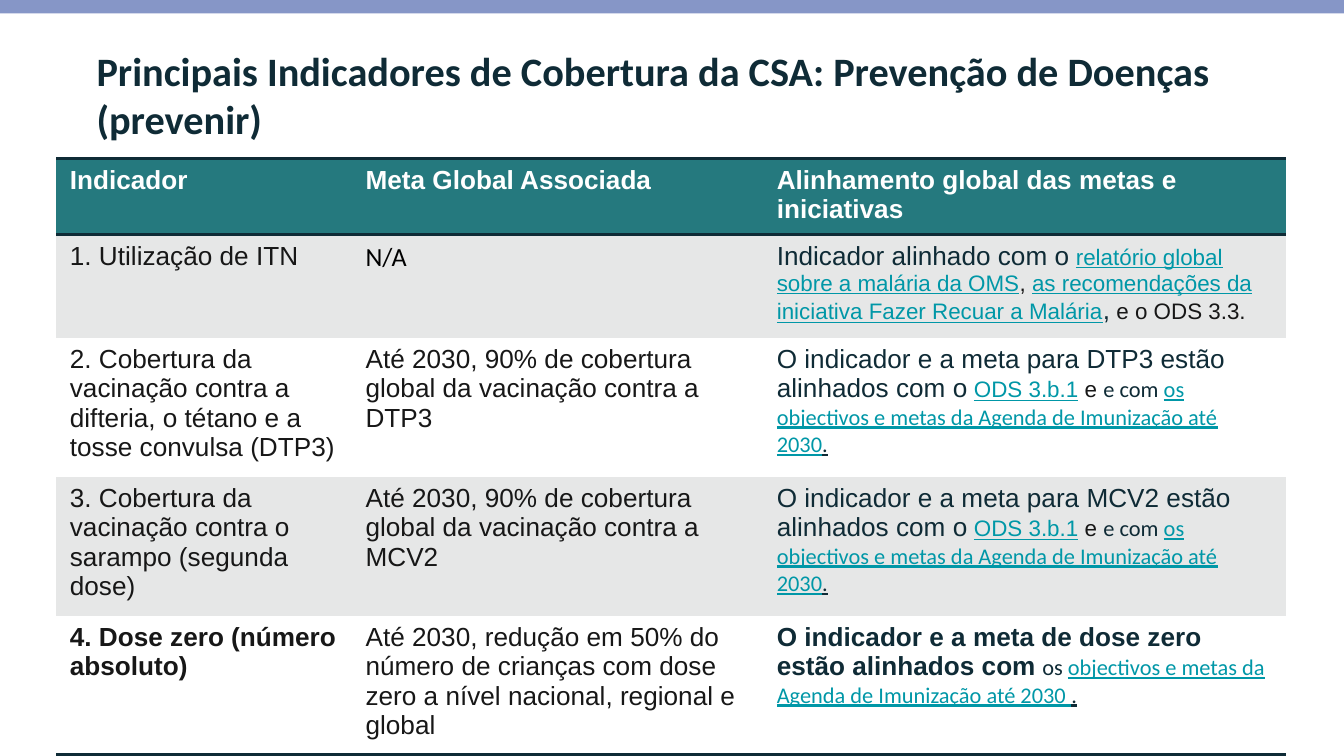
from lxml import etree
from pptx import Presentation
from pptx import util as u
from pptx.dml.color import RGBColor
from pptx.enum import shapes, text
from pptx.oxml import ns

NAVY = RGBColor(0x0F, 0x2B, 0x36)
TEAL = RGBColor(0x25, 0x79, 0x7E)
LINK = RGBColor(0x00, 0x97, 0xA7)
BAND = RGBColor(0x86, 0x96, 0xC7)
GREY = RGBColor(0xE6, 0xE7, 0xE7)
INK = RGBColor(0x17, 0x17, 0x17)
BLACK = RGBColor(0, 0, 0)
WHITE = RGBColor(0xFF, 0xFF, 0xFF)

WIDE = u.Inches(10)
HIGH = WIDE * 9 // 16
UNIT = WIDE // 100
PLAIN = "{2D5ABB26-0587-4C30-8999-92F81FD0307C}"

STYLES = {
    "title": ("Calibri", 21.6, NAVY, True, False),
    "head": ("Arial", 14, WHITE, True, False),
    "body": ("Arial", 14, INK, False, False),
    "strong": ("Arial", 14, INK, True, False),
    "none": ("Calibri", 14, BLACK, False, False),
    "lead": ("Arial", 14, NAVY, False, False),
    "key": ("Arial", 14, NAVY, True, False),
    "small": ("Arial", 12, INK, False, False),
    "link": ("Arial", 12, LINK, False, True),
    "note": ("Calibri", 12, NAVY, False, False),
    "goal": ("Calibri", 12, LINK, False, True),
    "stop": ("Calibri", 12, NAVY, False, True),
}

AGENDA = "objectivos e metas da Agenda de Imunização até 2030"


def vaccine(name):
    """Return the alignment runs for one vaccine."""
    return [
        ("lead", f"O indicador e a meta para {name} estão alinhados com o"),
        ("small", " "), ("link", "ODS 3.b.1"), ("small", " e "),
        ("note", "e com "), ("goal", "os " + AGENDA), ("stop", "."),
    ]


def target(name):
    """Return the coverage target runs for one vaccine."""
    return [("body", f"Até 2030, 90% de cobertura global da vacinação contra a {name}")]


ROWS = [
    [[("head", "Indicador")],
     [("head", "Meta Global Associada")],
     [("head", "Alinhamento global das metas e iniciativas")]],
    [[("body", "1. Utilização de ITN")],
     [("none", "N/A")],
     [("lead", "Indicador alinhado com o"), ("small", " "),
      ("link", "relatório global sobre a malária da OMS"), ("small", ", "),
      ("link", "as recomendações da iniciativa Fazer Recuar a Malária"),
      ("lead", ","), ("small", " e o ODS 3.3.")]],
    [[("body", "2. Cobertura da vacinação contra a difteria, o tétano e a tosse convulsa (DTP3)")],
     target("DTP3"), vaccine("DTP3")],
    [[("body", "3. Cobertura da vacinação contra o sarampo (segunda dose)")],
     target("MCV2"), vaccine("MCV2")],
    [[("strong", "4. Dose zero (número absoluto)")],
     [("body", "Até 2030, redução em 50% do número de crianças com dose zero "
               "a nível nacional, regional e global")],
     [("key", "O indicador e a meta de dose zero estão alinhados com"),
      ("small", " "), ("note", "os "), ("goal", AGENDA + " "), ("stop", ".")]],
]


def area(*cells):
    """Turn left, top, width and height in grid units into a box."""
    return [int(cell * UNIT) for cell in cells]


def write(para, runs):
    """Add styled runs to a paragraph."""
    for style, words in runs:
        run = para.add_run()
        run.text = words
        font = run.font
        font.name, size, font.color.rgb, font.bold, font.underline = STYLES[style]
        font.size = u.Pt(size)


def rule(cell, side):
    """Draw a navy line on one side of a cell."""
    line = etree.Element(ns.qn("a:ln" + side), w=str(u.Pt(2)))
    fill = etree.SubElement(line, ns.qn("a:solidFill"))
    etree.SubElement(fill, ns.qn("a:srgbClr"), val=str(NAVY))
    props = cell._tc.get_or_add_tcPr()
    props.insert(len(props.findall(ns.qn("a:lnT"))), line)


def strip(slide, box):
    """Place the coloured band in its box."""
    bar = slide.shapes.add_shape(shapes.MSO_SHAPE.RECTANGLE, *box)
    bar.shadow.inherit = False
    bar.fill.solid()
    bar.fill.fore_color.rgb = BAND
    bar.line.fill.background()


def title(slide, box, words):
    """Place the heading in its box."""
    frame = slide.shapes.add_textbox(*box).text_frame
    frame.word_wrap = True
    frame.vertical_anchor = text.MSO_ANCHOR.TOP
    frame.margin_left = frame.margin_right = u.Inches(0.1)
    frame.margin_top = frame.margin_bottom = u.Inches(0.1)
    write(frame.paragraphs[0], [("title", words)])


def grid(slide, box, parts, step):
    """Place the indicator table, with columns split by parts and rows of one step."""
    frame = slide.shapes.add_table(len(ROWS), len(parts), *box)
    table = frame.table
    table._tbl.tblPr.find(ns.qn("a:tableStyleId")).text = PLAIN
    table.horz_banding = False
    for col, part in zip(table.columns, parts):
        col.width = int(box[2] * part / sum(parts))
    for row in table.rows:
        row.height = int(step * UNIT)
    frame.height = box[3]
    last = len(ROWS) - 1
    for i, row in enumerate(ROWS):
        for j, runs in enumerate(row):
            cell = table.cell(i, j)
            cell.fill.solid()
            cell.fill.fore_color.rgb = TEAL if i == 0 else GREY if i % 2 else WHITE
            if i == 0:
                rule(cell, "T")
            if i in (0, last):
                rule(cell, "B")
            write(cell.text_frame.paragraphs[0], runs)


def main():
    """Build and save the slide."""
    deck = Presentation()
    deck.slide_width, deck.slide_height = WIDE, HIGH
    slide = deck.slides.add_slide(deck.slide_layouts[6])
    strip(slide, area(0, 0, 100, 1))
    strip(slide, area(0, 0, 100, 0.6))
    title(slide, area(6.2, 2.4, 87.2, 7.1),
          "Principais Indicadores de Cobertura da CSA: Prevenção de Doenças (prevenir)")
    grid(slide, area(4.2, 11.8, 91.5, 38.1), (22, 30.6, 38.9), 4.1)
    deck.save("out.pptx")


if __name__ == "__main__":
    main()
